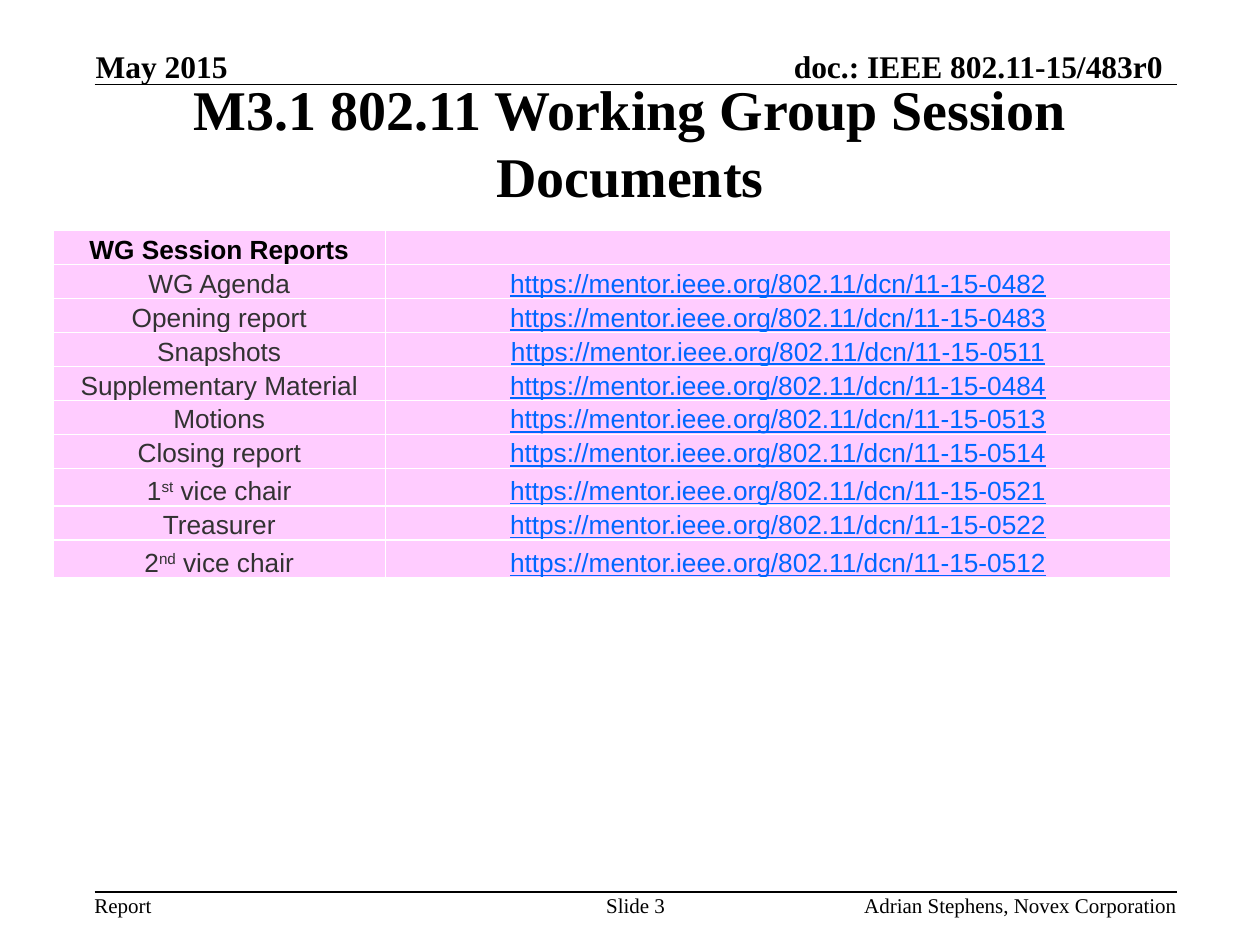
from dataclasses import dataclass

from lxml import etree
from pptx import Presentation
from pptx.dml.color import RGBColor
from pptx.enum import shapes, text
from pptx.oxml import ns
from pptx.util import Inches, Pt


@dataclass(frozen=True)
class Theme:
    serif: str = "Times New Roman"
    sans: str = "Arial"
    ink: str = "000000"
    label: str = "323232"
    link: str = "0066FF"
    band: str = "FFCCFF"
    title: int = 32
    header: int = 18
    footer: int = 12
    body: int = 15


THEME = Theme()
LEFT, CENTER, RIGHT = text.PP_ALIGN.LEFT, text.PP_ALIGN.CENTER, text.PP_ALIGN.RIGHT
TOP, MIDDLE, BOTTOM = text.MSO_ANCHOR.TOP, text.MSO_ANCHOR.MIDDLE, text.MSO_ANCHOR.BOTTOM

HEADING = "WG Session Reports"
LINK_BASE = "https://mentor.ieee.org/802.11/dcn/11-15-"
# Each label is a list of (words, is superscript) spans
REPORTS = [
    ([("WG Agenda", False)], "0482"),
    ([("Opening report", False)], "0483"),
    ([("Snapshots", False)], "0511"),
    ([("Supplementary Material", False)], "0484"),
    ([("Motions", False)], "0513"),
    ([("Closing report", False)], "0514"),
    ([("1", False), ("st", True), (" vice chair", False)], "0521"),
    ([("Treasurer", False)], "0522"),
    ([("2", False), ("nd", True), (" vice chair", False)], "0512"),
]


def style(para, face, size, color, align, bold=False, underline=False):
    para.alignment = align
    font = para.font
    font.name, font.size = face, Pt(size)
    font.bold, font.underline = bold, underline
    font.color.rgb = RGBColor.from_string(color)


def add_text(page, box, words, size, align, anchor, bold=False, inset=0):
    frame = page.shapes.add_textbox(*map(Inches, box)).text_frame
    frame.word_wrap = True
    frame.vertical_anchor = anchor
    frame.margin_left = frame.margin_right = Inches(inset)
    frame.margin_top = frame.margin_bottom = Inches(inset / 2)
    para = frame.paragraphs[0]
    para.add_run().text = words
    style(para, THEME.serif, size, THEME.ink, align, bold)


def add_rule(page, left, top, width):
    rule = page.shapes.add_connector(
        shapes.MSO_CONNECTOR.STRAIGHT,
        Inches(left), Inches(top), Inches(left + width), Inches(top))
    rule.line.color.rgb = RGBColor.from_string(THEME.ink)
    rule.line.width = Pt(1)
    etree.SubElement(rule._element.spPr, ns.qn("a:effectLst"))


def add_header(page, box):
    left, top, width, height = box
    add_text(page, (left + 0.01, top, 3, height), "May 2015",
             THEME.header, LEFT, BOTTOM, bold=True)
    add_text(page, (left + 4, top, width - 4.11, height), "doc.: IEEE 802.11-15/483r0",
             THEME.header, RIGHT, BOTTOM, bold=True)
    add_rule(page, left, top + height, width)


def add_footer(page, box):
    left, top, width, height = box
    add_rule(page, left, top, width)
    add_text(page, (left, top, 2, height), "Report", THEME.footer, LEFT, TOP)
    add_text(page, (left + width / 2 - 1, top, 2, height), "Slide 3",
             THEME.footer, CENTER, TOP)
    add_text(page, (left + width - 3, top, 3, height),
             "Adrian Stephens, Novex Corporation", THEME.footer, RIGHT, TOP)


def fill_cell(cell, spans, color, bold=False, underline=False):
    cell.fill.solid()
    cell.fill.fore_color.rgb = RGBColor.from_string(THEME.band)
    cell.margin_left = cell.margin_right = cell.margin_top = cell.margin_bottom = 0
    cell.vertical_anchor = BOTTOM
    para = cell.text_frame.paragraphs[0]
    style(para, THEME.sans, THEME.body, color, CENTER, bold, underline)
    for words, raised in spans:
        span = para.add_run()
        span.text = words
        if raised:
            span._r.get_or_add_rPr().set("baseline", "30000")
    if not spans:  # keeps an empty cell as low as its neighbours
        end = etree.SubElement(para._p, ns.qn("a:endParaRPr"))
        end.set("sz", str(THEME.body * 100))


def add_reports(page, box):
    left, top, width, height = box
    table = page.shapes.add_table(
        len(REPORTS) + 1, 2, *map(Inches, box)).table
    table.first_row = table.horz_banding = False
    label_width = 2.64
    table.columns[0].width = Inches(label_width)
    table.columns[1].width = Inches(width - label_width)
    for row in table.rows:
        row.height = Inches(0.27)

    fill_cell(table.cell(0, 0), [(HEADING, False)], THEME.ink, bold=True)
    fill_cell(table.cell(0, 1), [], THEME.ink)
    for index, (label, number) in enumerate(REPORTS, start=1):
        fill_cell(table.cell(index, 0), label, THEME.label)
        fill_cell(table.cell(index, 1), [(LINK_BASE + number, False)],
                  THEME.link, underline=True)
        if len(label) > 1:  # superscripts need a taller row
            table.rows[index].height = Inches(0.3)


def main():
    deck = Presentation()
    deck.slide_width, deck.slide_height = Inches(10), Inches(7.5)
    page = deck.slides.add_slide(deck.slide_layouts[6])
    add_header(page, (0.75, 0.36, 8.59, 0.31))
    add_text(page, (0.75, 0.75, 8.5, 0.75), "M3.1 802.11 Working Group Session Documents",
             THEME.title, CENTER, MIDDLE, bold=True, inset=0.1)
    add_reports(page, (0.42, 1.83, 8.87, 2.75))
    add_footer(page, (0.75, 7.08, 8.59, 0.2))
    deck.save("out.pptx")


if __name__ == "__main__":
    main()
